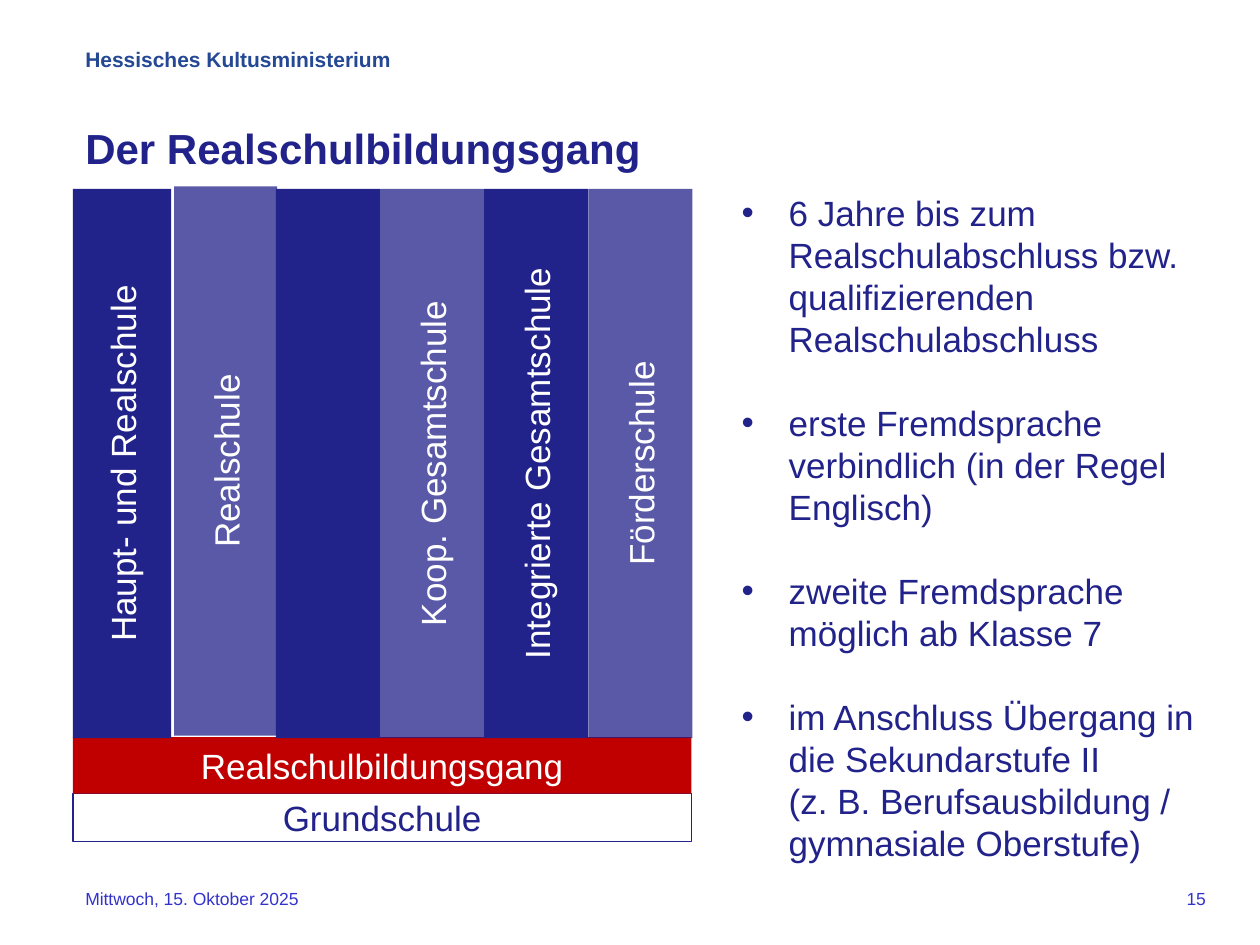
"""Build the slide on the Realschule track: school columns, base bars and key facts."""
from dataclasses import dataclass
from typing import Any

from lxml.etree import SubElement
from pptx import Presentation
from pptx.dml.color import RGBColor
from pptx.enum.shapes import MSO_SHAPE as Shape
from pptx.enum.text import MSO_ANCHOR as Anchor, PP_ALIGN as Align
from pptx.oxml.ns import qn
from pptx.util import Cm, Pt

NAVY, WHITE, RED = "22228B", "FFFFFF", "C00000"
FOOTER_BLUE, HEADER_BLUE = "3333CC", "244894"
LEFT, COLUMN_TOP, COLUMN_HEIGHT = 1.47, 3.81, 11.07
COLUMN_WIDTH, THIRD_COLUMN, DIAGRAM_WIDTH = 2.1, 5.56, 12.47


@dataclass
class Block:
    text: str
    left: float
    top: float
    width: float
    height: float
    fill: str = NAVY
    color: str = WHITE
    line: str = ""
    opacity: int = 100
    vertical: bool = False


@dataclass
class Label:
    text: str
    left: float
    top: float
    width: float
    height: float
    size: int
    color: str
    bold: bool = False
    align: Align = Align.LEFT


def rgb(value: str) -> RGBColor:
    return RGBColor.from_string(value)


def apply(target: Any, values: dict[str, Any]) -> None:
    for name, value in values.items():
        setattr(target, name, value)


def style_runs(paragraph: Any, size: int, color: str, bold: bool = False) -> None:
    for run in paragraph.runs:
        apply(run.font, {"name": "Arial", "size": Pt(size), "bold": bold})
        run.font.color.rgb = rgb(color)


def draw_block(slide: Any, block: Block) -> None:
    bar = slide.shapes.add_shape(
        Shape.RECTANGLE, Cm(block.left), Cm(block.top), Cm(block.width), Cm(block.height)
    )
    bar.shadow.inherit = False
    bar.fill.solid()
    bar.fill.fore_color.rgb = rgb(block.fill)
    if block.opacity < 100:
        tint = bar.fill._xPr.find(qn("a:solidFill")).find(qn("a:srgbClr"))
        SubElement(tint, qn("a:alpha"), val=str(block.opacity * 1000))
    if block.line:
        bar.line.color.rgb = rgb(block.line)
        bar.line.width = Pt(0.75)
    else:
        bar.line.fill.background()
    if block.text:
        frame = bar.text_frame
        apply(frame, {"text": block.text, "word_wrap": True, "vertical_anchor": Anchor.MIDDLE})
        if block.vertical:
            frame._txBody.bodyPr.set("vert", "vert270")
        frame.paragraphs[0].alignment = Align.CENTER
        style_runs(frame.paragraphs[0], 20, block.color)


def draw_label(slide: Any, label: Label) -> None:
    box = slide.shapes.add_textbox(
        Cm(label.left), Cm(label.top), Cm(label.width), Cm(label.height)
    )
    apply(box.text_frame, {"text": label.text, "word_wrap": True})
    paragraph = box.text_frame.paragraphs[0]
    paragraph.alignment = label.align
    style_runs(paragraph, label.size, label.color, label.bold)


def draw_facts(slide: Any, facts: list[str]) -> None:
    frame = slide.shapes.add_textbox(Cm(14.7), Cm(3.73), Cm(9.8), Cm(13.95)).text_frame
    frame.word_wrap = True
    for index, fact in enumerate(facts):
        paragraph = frame.add_paragraph() if index else frame.paragraphs[0]
        paragraph.text = fact
        properties = paragraph._p.get_or_add_pPr()
        apply(paragraph, {"line_spacing": Pt(24), "space_before": Pt(24 if index else 0)})
        properties.set("marL", str(Cm(0.95)))
        properties.set("indent", str(-Cm(0.95)))
        SubElement(properties, qn("a:buFont"), typeface="Arial")
        SubElement(properties, qn("a:buChar"), char="•")
        style_runs(paragraph, 20, NAVY)


def main() -> None:
    labels = [
        Label("15", 18.21, 17.78, 6.35, 0.84, 10, FOOTER_BLUE, align=Align.RIGHT),
        Label("Mittwoch, 15. Oktober 2025", LEFT, 17.78, 8.18, 1.07, 10, FOOTER_BLUE),
        Label("Der Realschulbildungsgang", LEFT, 2.34, 21.59, 3.18, 24, NAVY, True),
        Label("Hessisches Kultusministerium", LEFT, 0.81, 8.05, 1.27, 12, HEADER_BLUE, True),
    ]
    facts = [
        "6 Jahre bis zum Realschulabschluss bzw. qualifizierenden Realschulabschluss",
        "erste Fremdsprache verbindlich (in der Regel Englisch)",
        "zweite Fremdsprache möglich ab Klasse 7",
        "im Anschluss Übergang in die Sekundarstufe II \v(z. B. Berufsausbildung / gymnasiale Oberstufe)",
    ]
    blocks = [
        Block("Grundschule", LEFT, 16, DIAGRAM_WIDTH, 0.97, WHITE, NAVY, NAVY),
        Block("Realschulbildungsgang", LEFT, 14.86, DIAGRAM_WIDTH, 1.14, RED),
        Block("Realschule", 3.51, 3.76, 2.08, COLUMN_HEIGHT, opacity=75, vertical=True),
        Block("Haupt- und Realschule", LEFT, COLUMN_TOP, 1.98, COLUMN_HEIGHT, vertical=True),
    ]
    further_schools = ["", "Koop. Gesamtschule", "Integrierte Gesamtschule", "Förderschule"]
    blocks += [
        Block(school, THIRD_COLUMN + index * COLUMN_WIDTH, COLUMN_TOP, COLUMN_WIDTH,
              COLUMN_HEIGHT, opacity=75 if index % 2 else 100, vertical=True)
        for index, school in enumerate(further_schools)
    ]

    deck = Presentation()
    apply(deck, {"slide_width": Cm(25.4), "slide_height": Cm(19.05)})
    slide = deck.slides.add_slide(deck.slide_layouts[6])
    for label in labels:
        draw_label(slide, label)
    draw_facts(slide, facts)
    for block in blocks:
        draw_block(slide, block)
    deck.save("out.pptx")


if __name__ == "__main__":
    main()
